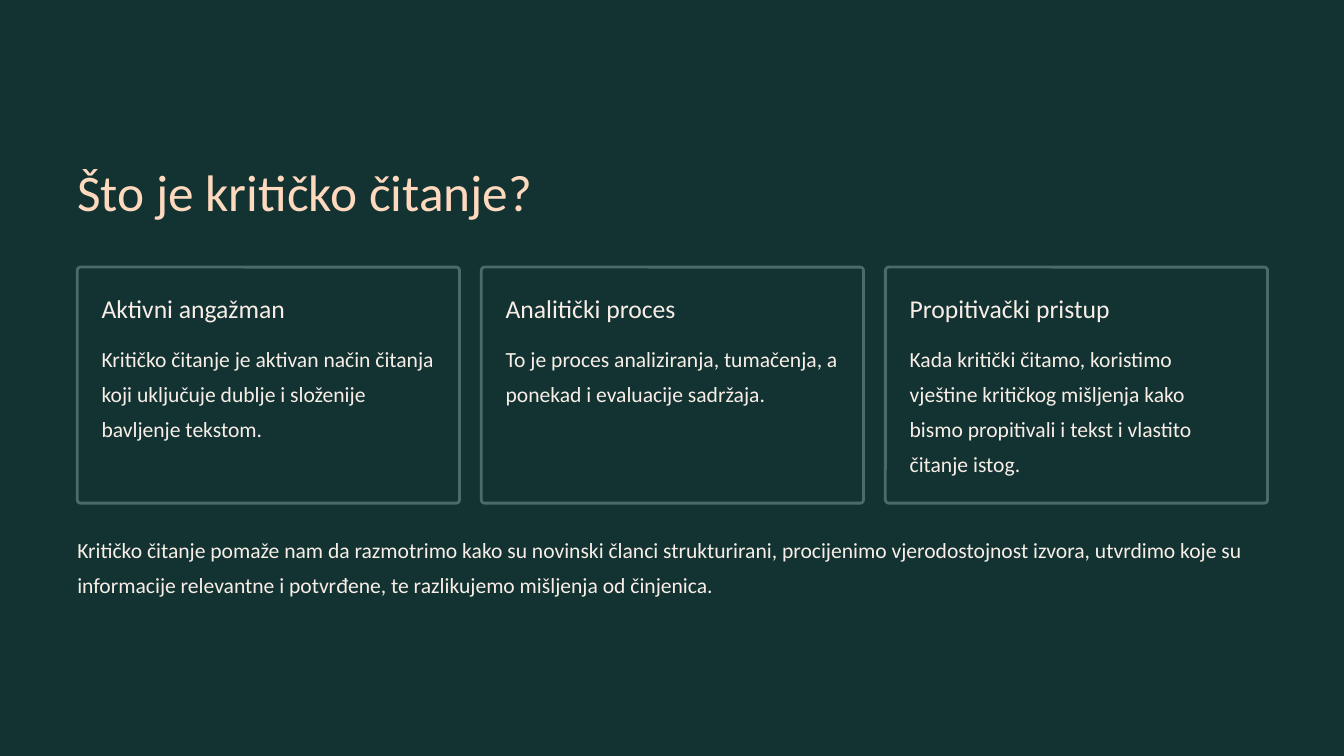
from pptx import Presentation
from pptx.dml.color import RGBColor
from pptx.enum.shapes import MSO_SHAPE
from pptx.enum.text import MSO_ANCHOR, MSO_AUTO_SIZE, PP_ALIGN
from pptx.util import Inches, Pt

ROUND = MSO_SHAPE.ROUNDED_RECTANGLE
TOP = MSO_ANCHOR.TOP
LEFT = PP_ALIGN.LEFT
FIXED = MSO_AUTO_SIZE.NONE

COLORS = {"back": "123332", "line": "4A6B6A", "title": "FFD9BE", "text": "F9EEE7"}
FONT = "Calibri"
EDGE = 0.92
STEP = 4.81
PAD = 0.29

CARDS = [
    ("Aktivni angažman",
     "Kritičko čitanje je aktivan način čitanja koji uključuje dublje i "
     "složenije bavljenje tekstom."),
    ("Analitički proces",
     "To je proces analiziranja, tumačenja, a ponekad i evaluacije sadržaja."),
    ("Propitivački pristup",
     "Kada kritički čitamo, koristimo vještine kritičkog mišljenja kako bismo "
     "propitivali i tekst i vlastito čitanje istog."),
]
CLOSING = (
    "Kritičko čitanje pomaže nam da razmotrimo kako su novinski članci "
    "strukturirani, procijenimo vjerodostojnost izvora, utvrdimo koje su "
    "informacije relevantne i potvrđene, te razlikujemo mišljenja od činjenica."
)


def color(name):
    return RGBColor.from_string(COLORS[name])


def write(shape, text, size=18.5, lead=30, tint="text", wrap=True):
    frame = shape.text_frame
    frame.auto_size = FIXED
    frame.word_wrap = wrap
    frame.vertical_anchor = TOP
    frame.margin_left = frame.margin_right = 0
    frame.margin_top = frame.margin_bottom = 0
    para = frame.paragraphs[0]
    para.alignment = LEFT
    para.line_spacing = Pt(lead)
    run = para.add_run()
    run.text = text
    run.font.name = FONT
    run.font.size = Pt(size)
    run.font.color.rgb = color(tint)


def add_text(slide, text, left, top, width, height, **style):
    box = slide.shapes.add_textbox(
        Inches(left), Inches(top), Inches(width), Inches(height))
    write(box, text, **style)


def add_title(slide, text):
    title = slide.shapes.title
    title.left, title.top = Inches(EDGE), Inches(1.88)
    title.width, title.height = Inches(6.91), Inches(0.77)
    write(title, text, size=44, lead=55, tint="title", wrap=False)


def add_card(slide, left, head, body):
    card = slide.shapes.add_shape(
        ROUND, Inches(left), Inches(3.18), Inches(4.55), Inches(2.81))
    card.adjustments[0] = 0.014
    card.shadow.inherit = False
    card.fill.solid()
    card.fill.fore_color.rgb = color("back")
    card.line.color.rgb = color("line")
    card.line.width = Pt(2.4)
    add_text(slide, head, left + PAD, 3.47, 3.1, 0.38,
             size=22, lead=27.5, wrap=False)
    add_text(slide, body, left + PAD, 4.01, 3.96, 1.68)


def main():
    deck = Presentation()
    deck.slide_width, deck.slide_height = Inches(16), Inches(9)
    slide = deck.slides.add_slide(deck.slide_layouts[5])
    fill = slide.background.fill
    fill.solid()
    fill.fore_color.rgb = color("back")
    add_title(slide, "Što je kritičko čitanje?")
    for i, (head, body) in enumerate(CARDS):
        add_card(slide, EDGE + i * STEP, head, body)
    add_text(slide, CLOSING, EDGE, 6.28, 14.17, 0.84)
    deck.save("out.pptx")


if __name__ == "__main__":
    main()
